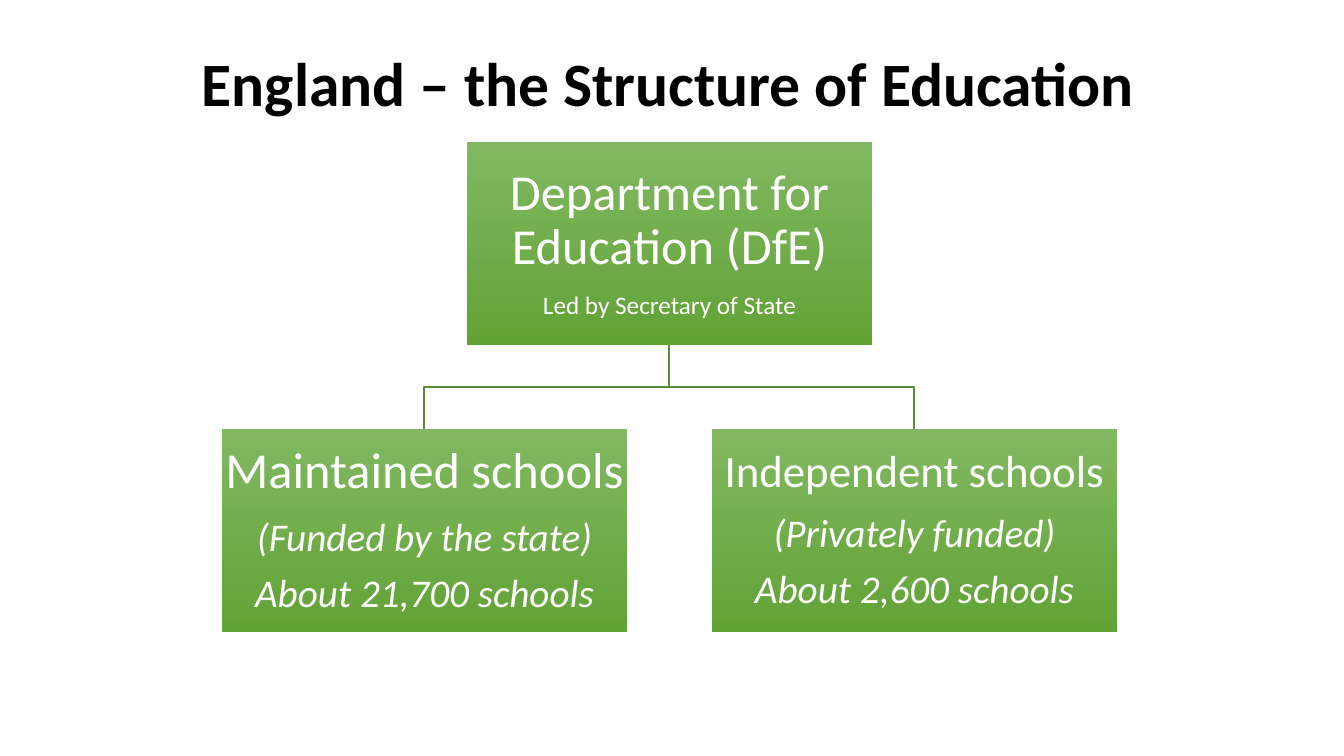
from pptx import Presentation
from pptx.dml.color import RGBColor
from pptx.enum.shapes import MSO_SHAPE
from pptx.enum.text import MSO_ANCHOR, PP_ALIGN
from pptx.util import Pt

PX = 914400 / 100.8
BOX_W, BOX_H = 405, 203
TOP_X, TOP_Y = 467, 142
CHILD_X, CHILD_Y, CHILD_PITCH = 222, 429, 490
GRADIENT = ("81B861", "62A336")
LINE_GREEN = "5A8B39"


def px(length):
    return round(length * PX)


def color(code):
    return RGBColor.from_string(code)


def set_font(font, size, code, bold=False, italic=False):
    font.name = "Calibri"
    font.size = Pt(size)
    font.bold = bold
    font.italic = italic
    font.color.rgb = color(code)


def add_title(page, text):
    box = page.shapes.add_textbox(px(192), px(40), px(963), px(85))
    box.text_frame.word_wrap = True
    para = box.text_frame.paragraphs[0]
    para.text = text
    set_font(para.font, 44, "000000", bold=True)


def add_branch(page, child_x):
    """Draw the elbow line from the top box to one child box."""
    start_x, end_x = TOP_X + BOX_W // 2, child_x + BOX_W // 2
    start_y = TOP_Y + BOX_H
    middle_y = (start_y + CHILD_Y) // 2
    builder = page.shapes.build_freeform(start_x, start_y, scale=PX)
    builder.add_line_segments(
        [(start_x, middle_y), (end_x, middle_y), (end_x, CHILD_Y)], close=False)
    branch = builder.convert_to_shape()
    branch.shadow.inherit = False
    branch.fill.background()
    branch.line.color.rgb = color(LINE_GREEN)
    branch.line.width = Pt(1)


def add_box(page, x, y, inset, lines):
    """Draw a green box; each line is (text, size, italic)."""
    box = page.shapes.add_shape(
        MSO_SHAPE.RECTANGLE, px(x), px(y), px(BOX_W), px(BOX_H))
    box.shadow.inherit = False
    box.line.fill.background()
    box.fill.gradient()
    box.fill.gradient_angle = 270
    for stop, code, position in zip(box.fill.gradient_stops, GRADIENT, (0, 1)):
        stop.color.rgb = color(code)
        stop.position = position

    frame = box.text_frame
    frame.word_wrap = True
    frame.vertical_anchor = MSO_ANCHOR.MIDDLE
    frame.margin_left = frame.margin_right = px(inset)
    frame.margin_top = frame.margin_bottom = px(inset)
    for index, (text, size, italic) in enumerate(lines):
        para = frame.add_paragraph() if index else frame.paragraphs[0]
        para.text = text
        para.alignment = PP_ALIGN.CENTER
        para.line_spacing = 0.9
        para.space_after = Pt(round(size * 0.35, 1))
        set_font(para.font, size, "FFFFFF", italic=italic)


def main():
    deck = Presentation()
    deck.slide_width, deck.slide_height = px(1344), px(756)
    page = deck.slides.add_slide(deck.slide_layouts[6])

    # Branches lie behind the boxes
    child_columns = [CHILD_X, CHILD_X + CHILD_PITCH]
    for x in child_columns:
        add_branch(page, x)

    # Department at the top
    add_box(page, TOP_X, TOP_Y, 3, [
        ("Department for Education (DfE)", 36, False),
        ("Led by Secretary of State", 18, False),
    ])

    # School types below
    schools = [
        (3, "Maintained schools", 36, "(Funded by the state)", "About 21,700 schools"),
        (2, "Independent schools", 32, "(Privately funded)", "About 2,600 schools"),
    ]
    for x, (inset, name, size, funding, count) in zip(child_columns, schools):
        add_box(page, x, CHILD_Y, inset, [
            (name, size, False), (funding, 28, True), (count, 28, True)])

    add_title(page, "England – the Structure of Education")
    deck.save("out.pptx")


if __name__ == "__main__":
    main()
